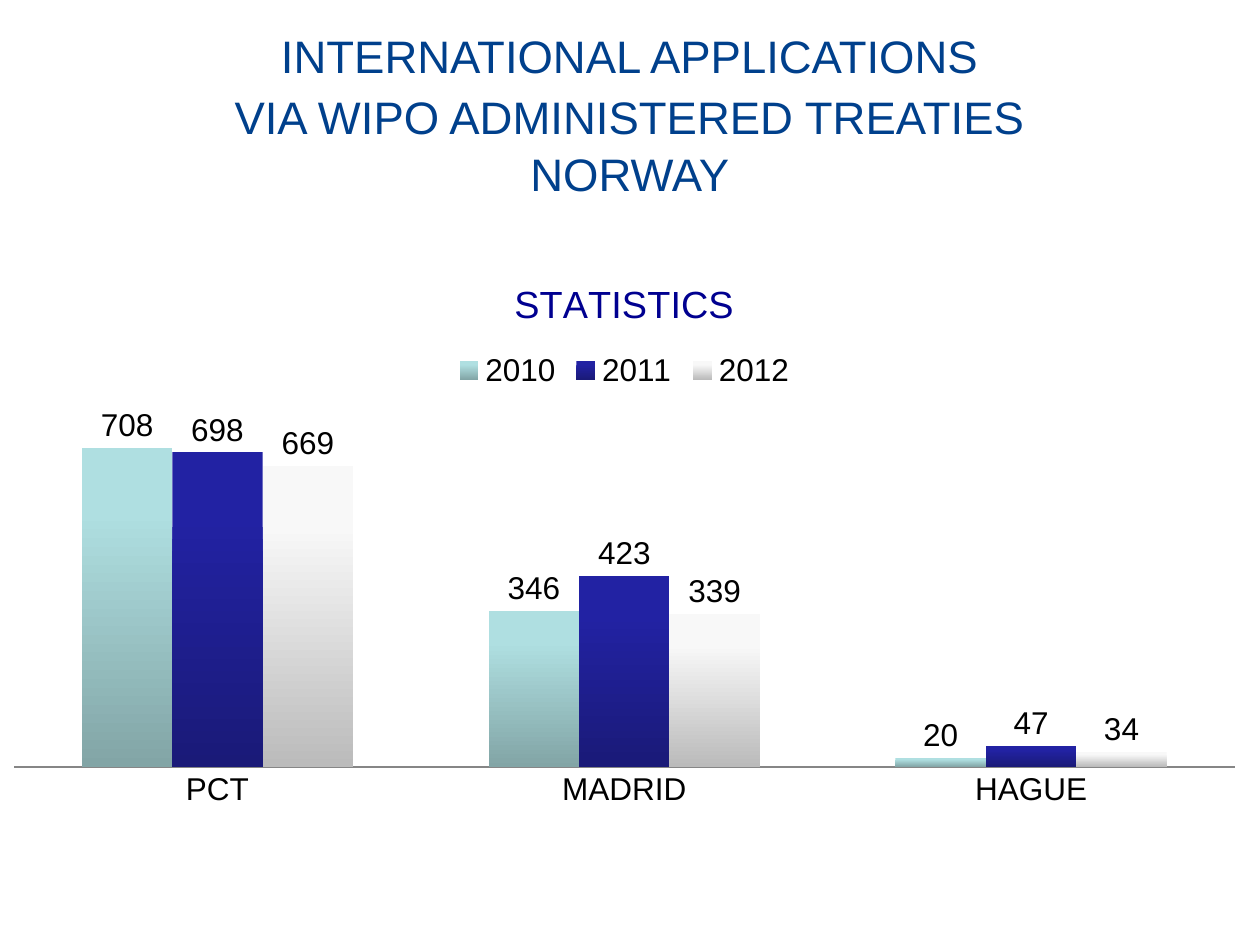
from pptx import Presentation
from pptx.chart.data import CategoryChartData
from pptx.dml.color import RGBColor
from pptx.enum.chart import (XL_CHART_TYPE, XL_LABEL_POSITION,
                             XL_LEGEND_POSITION, XL_TICK_MARK)
from pptx.enum.text import PP_ALIGN
from pptx.oxml import parse_xml
from pptx.oxml.ns import nsdecls
from pptx.util import Inches, Pt

COLUMN = XL_CHART_TYPE.COLUMN_CLUSTERED
OUTSIDE = XL_LABEL_POSITION.OUTSIDE_END
TOP = XL_LEGEND_POSITION.TOP
NO_TICK = XL_TICK_MARK.NONE
CENTER = PP_ALIGN.CENTER

WIDTH, HEIGHT = 10, 7.5
FACE = "Arial"
COLORS = {"head": "00408C", "title": "000090", "text": "000000", "axis": "868686"}

# Heading lines with the space before each, in points
HEAD = [("INTERNATIONAL APPLICATIONS", 0),
        ("VIA WIPO ADMINISTERED TREATIES", 4),
        ("NORWAY", 1)]
TITLE = "STATISTICS"
TREATIES = ["PCT", "MADRID", "HAGUE"]
# Year, filings per treaty, top and bottom colour of the columns
YEARS = [("2010", (708, 346, 20), ("AFDFE1", "82A5A6")),
         ("2011", (698, 423, 47), ("2222A3", "1A1A78")),
         ("2012", (669, 339, 34), ("F8F8F8", "BBBBBB"))]
# Plot area as shares of the chart
PLOT = {"x": 0.02, "y": 0.27, "w": 0.96, "h": 0.64}


def style(font, size, color):
    font.name = FACE
    font.size = Pt(size)
    font.bold = False
    font.color.rgb = RGBColor.from_string(COLORS[color])


def add_head(slide):
    box = slide.shapes.add_textbox(0, Inches(0.22), Inches(WIDTH), Inches(1.4))
    frame = box.text_frame
    frame.word_wrap = True
    frame.margin_top = frame.margin_bottom = 0
    for i, (line, gap) in enumerate(HEAD):
        para = frame.add_paragraph() if i else frame.paragraphs[0]
        para.alignment = CENTER
        para.space_before = Pt(gap)
        run = para.add_run()
        run.text = line
        style(run.font, 26, "head")


def set_plot(chart):
    """Fix the inner plot area by the shares in PLOT."""
    area = chart._chartSpace.chart.plotArea
    for old in area.findall("{*}layout"):
        area.remove(old)
    sizes = "".join(f'<c:{key} val="{val}"/>' for key, val in PLOT.items())
    area.insert(0, parse_xml(
        f'<c:layout {nsdecls("c")}><c:manualLayout><c:layoutTarget val="inner"/>'
        f'<c:xMode val="edge"/><c:yMode val="edge"/>{sizes}'
        '</c:manualLayout></c:layout>'))


def add_stats(slide):
    data = CategoryChartData()
    data.categories = TREATIES
    for year, counts, _ in YEARS:
        data.add_series(year, counts)
    chart = slide.shapes.add_chart(COLUMN, Inches(-0.09), Inches(2.02),
                                   Inches(10.09), Inches(4.47), data).chart
    style(chart.font, 18, "text")

    chart.has_title = True
    run = chart.chart_title.text_frame.paragraphs[0].add_run()
    run.text = TITLE
    style(run.font, 21.6, "title")
    chart.chart_title.include_in_layout = False

    chart.has_legend = True
    chart.legend.position = TOP
    chart.legend.include_in_layout = False
    style(chart.legend.font, 18, "text")

    values = chart.value_axis
    values.visible = False
    values.has_major_gridlines = False
    values.minimum_scale, values.maximum_scale = 0, 800
    axis = chart.category_axis
    axis.major_tick_mark = axis.minor_tick_mark = NO_TICK
    axis.format.line.color.rgb = RGBColor.from_string(COLORS["axis"])
    axis.format.line.width = Pt(0.75)
    style(axis.tick_labels.font, 18, "text")

    plot = chart.plots[0]
    plot.gap_width, plot.overlap = 150, 0
    plot.vary_by_categories = False
    for series, (_, _, shades) in zip(plot.series, YEARS):
        fill = series.format.fill
        fill.gradient()
        fill.gradient_angle = 270
        for stop, shade, place in zip(fill.gradient_stops, shades, (0.2, 1)):
            stop.color.rgb = RGBColor.from_string(shade)
            stop.position = place
        series.format.line.fill.background()
        labels = series.data_labels
        labels.show_value = True
        labels.position = OUTSIDE
        style(labels.font, 18, "text")
    set_plot(chart)


def main():
    deck = Presentation()
    deck.slide_width, deck.slide_height = Inches(WIDTH), Inches(HEIGHT)
    slide = deck.slides.add_slide(deck.slide_layouts[6])
    add_head(slide)
    add_stats(slide)
    deck.save("out.pptx")


if __name__ == "__main__":
    main()
